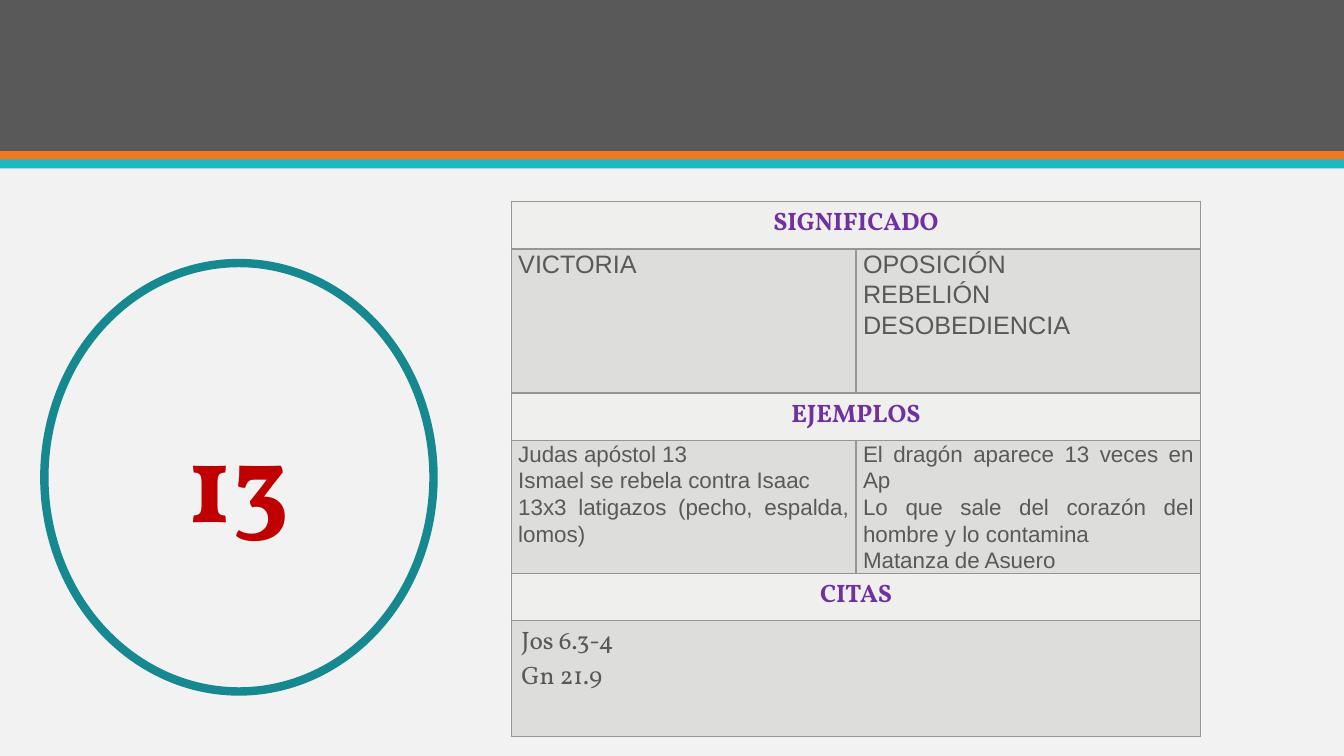
import pptx
import pptx.util
import pptx.dml.color
import pptx.enum.shapes
import pptx.enum.text
import pptx.oxml
import pptx.oxml.ns

Inches, Pt = pptx.util.Inches, pptx.util.Pt
SHAPES = pptx.enum.shapes.MSO_SHAPE
ALIGN = pptx.enum.text.PP_ALIGN

GREY, HEADING_FILL, BODY_FILL, BORDER = "595959", "EFEFEE", "DDDDDB", "969890"
HEADING = {"size": Pt(18), "name": "Vollkorn", "bold": True, "color": "7030A0"}
MEANING = {"size": Pt(18), "name": "Arial", "bold": False, "color": GREY}
EXAMPLE = MEANING | {"size": Pt(16)}
CITATION = MEANING | {"name": "Vollkorn"}
NUMBER = {"size": Pt(80), "name": "Vollkorn", "bold": True, "color": "C00000"}
CENTERED = {"alignment": ALIGN.CENTER}
JUSTIFIED = {"alignment": ALIGN.JUSTIFY, "line_spacing": 1.07}
LEFT = {"alignment": ALIGN.LEFT}
TIGHT = {"margin_left": Inches(0.07), "margin_right": Inches(0.07),
         "margin_top": 0, "margin_bottom": 0}

BANDS = [(0, 1.5, GREY), (1.5, 0.09, "EF7920"), (1.58, 0.09, "1EB8C1")]
# Each section: heading, body height, columns of lines, font, paragraph and cell formats
SECTIONS = [
    ("SIGNIFICADO", 1.43,
     [["VICTORIA"], ["OPOSICIÓN", "REBELIÓN", "DESOBEDIENCIA"]],
     MEANING, JUSTIFIED, TIGHT),
    ("EJEMPLOS", 1.31,
     [["Judas apóstol 13", "Ismael se rebela contra Isaac",
       "13x3 latigazos (pecho, espalda, lomos)"],
      ["El dragón aparece 13 veces en Ap",
       "Lo que sale del corazón del hombre y lo contamina",
       "Matanza de Asuero"]],
     EXAMPLE, JUSTIFIED, TIGHT),
    ("CITAS", 1.15, [["Jos 6.3-4", "Gn 21.9"]], CITATION, LEFT, {}),
]
HEADING_HEIGHT = 0.47


def rgb(value):
    return pptx.dml.color.RGBColor.from_string(value)


def apply(target, formats):
    for name, value in formats.items():
        if name == "color":
            target.color.rgb = rgb(value)
        else:
            setattr(target, name, value)


def write(frame, lines, font, layout):
    for index, line in enumerate(lines):
        para = frame.paragraphs[0] if index == 0 else frame.add_paragraph()
        apply(para, layout)
        span = para.add_run()
        span.text = line
        apply(span.font, font)


def add_band(page, top, height, color):
    band = page.shapes.add_shape(SHAPES.RECTANGLE, 0, Inches(top),
                                 Inches(13.33), Inches(height))
    band.shadow.inherit = False
    band.fill.solid()
    band.fill.fore_color.rgb = rgb(color)
    band.line.fill.background()


def add_number_ring(page, number):
    ring = page.shapes.add_shape(SHAPES.OVAL, Inches(0.44), Inches(2.61),
                                 Inches(3.86), Inches(4.25))
    ring.shadow.inherit = False
    ring.fill.background()
    ring.line.color.rgb = rgb("16888F")
    ring.line.width = Pt(6)
    ring.text_frame.vertical_anchor = pptx.enum.text.MSO_ANCHOR.MIDDLE
    write(ring.text_frame, [number], NUMBER, CENTERED)


def style_cell(cell, fill):
    """Draw the four borders, then the fill, in the order the format requires."""
    properties = cell._tc.get_or_add_tcPr()
    for side in ("lnL", "lnR", "lnT", "lnB"):
        properties.append(pptx.oxml.parse_xml(
            f'<a:{side} {pptx.oxml.ns.nsdecls("a")} w="{Pt(1)}"><a:solidFill>'
            f'<a:srgbClr val="{BORDER}"/></a:solidFill></a:{side}>'))
    cell.fill.solid()
    cell.fill.fore_color.rgb = rgb(fill)


def fill_row(row, height, fill, columns, font, layout, margins):
    """Fill one row; a single column of lines spans the whole width."""
    row.height = Inches(height)
    cells = list(row.cells)
    for cell in cells:
        style_cell(cell, fill)
    if len(columns) == 1:
        cells[0].merge(cells[-1])
    for cell, lines in zip(cells, columns):
        apply(cell, margins)
        write(cell.text_frame, lines, font, layout)


def add_sections(page):
    total = sum(HEADING_HEIGHT + section[1] for section in SECTIONS)
    table = page.shapes.add_table(2 * len(SECTIONS), 2, Inches(5.07), Inches(2),
                                  Inches(6.84), Inches(total)).table
    table.first_row = table.horz_banding = False
    rows = iter(table.rows)
    for heading, height, columns, font, layout, margins in SECTIONS:
        fill_row(next(rows), HEADING_HEIGHT, HEADING_FILL, [[heading]],
                 HEADING, CENTERED, {})
        fill_row(next(rows), height, BODY_FILL, columns, font, layout, margins)


def main():
    deck = pptx.Presentation()
    deck.slide_width, deck.slide_height = Inches(13.33), Inches(7.5)
    page = deck.slides.add_slide(deck.slide_layouts[6])
    page.background.fill.solid()
    page.background.fill.fore_color.rgb = rgb("F2F2F2")
    for band in BANDS:
        add_band(page, *band)
    add_number_ring(page, "13")
    add_sections(page)
    deck.save("out.pptx")


if __name__ == "__main__":
    main()
